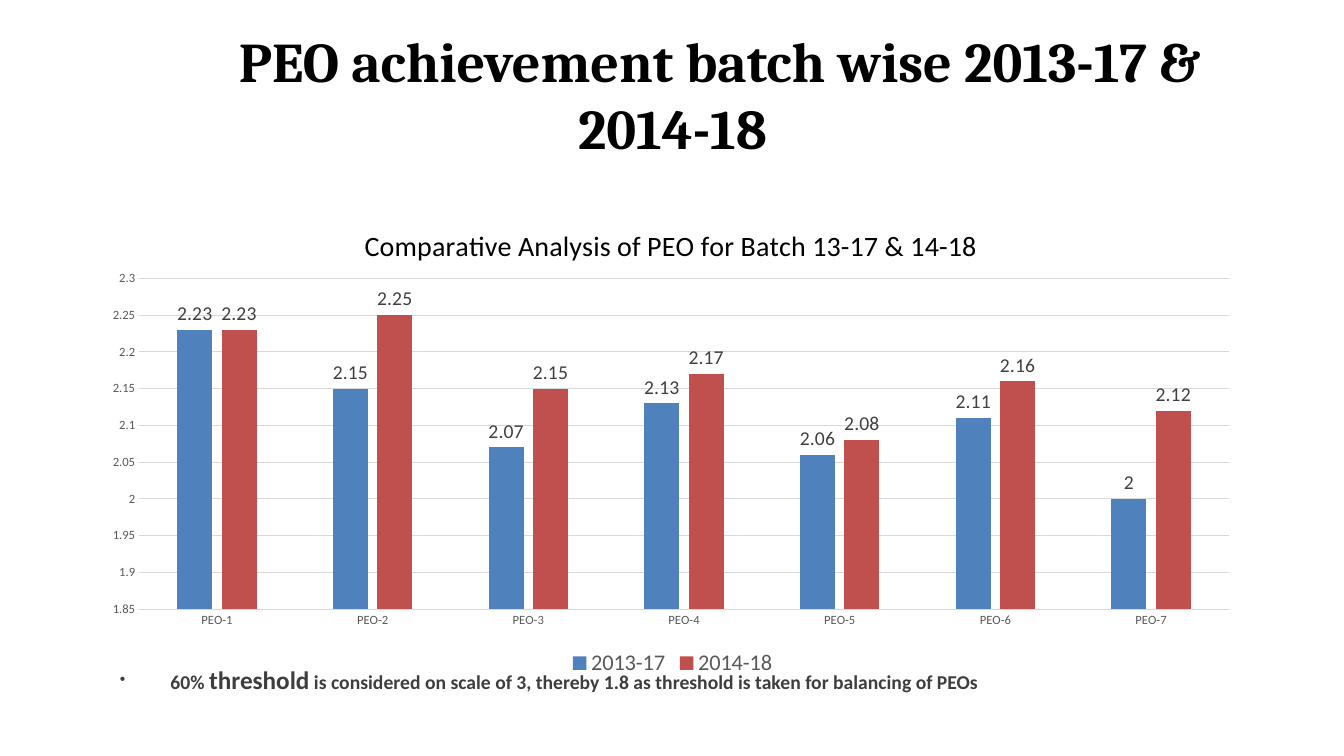
from lxml import etree
from pptx import Presentation
from pptx import util as u
from pptx.chart.data import CategoryChartData
from pptx.dml.color import RGBColor
from pptx.enum import chart as ch, text as tx
from pptx.oxml import ns

HUES = {"ink": "000000", "note": "3E3E3E", "label": "404040", "axis": "595959",
        "grid": "D9D9D9", "first": "4F81BD", "second": "C0504D"}
CATS = [f"PEO-{i}" for i in range(1, 8)]
BATCHES = {
    "2013-17": ("first", (2.23, 2.15, 2.07, 2.13, 2.06, 2.11, 2)),
    "2014-18": ("second", (2.23, 2.25, 2.15, 2.17, 2.08, 2.16, 2.12)),
}
NOTE = (("60% ", 14), ("threshold", 18),
        (" is considered on scale of 3, thereby 1.8 as threshold"
         " is taken for balancing of PEOs", 14))


def apply(item, **vals):
    for key, val in vals.items():
        setattr(item, key, val)


def style(font, size, hue, bold=False, name="Calibri"):
    apply(font, size=u.Pt(size), bold=bold, name=name)
    font.color.rgb = RGBColor.from_string(HUES[hue])


def rule(line, hue):
    line.width = u.Pt(0.75)
    line.color.rgb = RGBColor.from_string(HUES[hue])


def place(shape, box):
    names = ("left", "top", "width", "height")
    apply(shape, **dict(zip(names, map(u.Inches, box))))


def add(parent, tag, **attrs):
    return etree.SubElement(parent, ns.qn(tag), attrs)


def pin(node, after, **spots):
    for old in node.findall(ns.qn("c:layout")):
        node.remove(old)
    lay = etree.Element(ns.qn("c:layout"))
    man = add(lay, "c:manualLayout")
    if "w" in spots:
        add(man, "c:layoutTarget", val="inner")
    for key in ("xMode", "yMode"):
        add(man, f"c:{key}", val="edge")
    for key, val in spots.items():
        add(man, f"c:{key}", val=str(val))
    if after is None:
        node.insert(0, lay)
    else:
        after.addnext(lay)


def head(slide, box):
    title = slide.shapes.title
    place(title, box)
    frame = title.text_frame
    apply(frame, word_wrap=True, vertical_anchor=tx.MSO_ANCHOR.MIDDLE,
          auto_size=tx.MSO_AUTO_SIZE.NONE)
    para = frame.paragraphs[0]
    para.alignment = tx.PP_ALIGN.CENTER
    para._p.get_or_add_pPr().set("indent", str(u.Inches(0.94)))
    run = para.add_run()
    run.text = "PEO achievement batch wise 2013-17 & 2014-18"
    style(run.font, 40, "ink", True, "Cambria")


def bars(slide, box):
    data = CategoryChartData()
    data.categories = CATS
    for name, (hue, vals) in BATCHES.items():
        data.add_series(name, vals)
    chart = slide.shapes.add_chart(
        ch.XL_CHART_TYPE.COLUMN_CLUSTERED, *map(u.Inches, box), data).chart
    style(chart.font, 10, "ink")

    chart.has_title = True
    title = chart.chart_title
    title.include_in_layout = False
    run = title.text_frame.paragraphs[0].add_run()
    run.text = "Comparative Analysis of PEO for Batch 13-17 & 14-18"
    style(run.font, 20, "ink")
    node = title._element
    pin(node, node.find(ns.qn("c:tx")), x=0.23, y=0.04)
    pin(chart._chartSpace.chart.plotArea, None, x=0.04, y=0.16, w=0.94, h=0.69)

    chart.has_legend = True
    apply(chart.legend, position=ch.XL_LEGEND_POSITION.BOTTOM,
          include_in_layout=False)
    style(chart.legend.font, 16, "axis")

    for axis in (chart.category_axis, chart.value_axis):
        apply(axis, major_tick_mark=ch.XL_TICK_MARK.NONE,
              minor_tick_mark=ch.XL_TICK_MARK.NONE)
        style(axis.tick_labels.font, 9, "axis")
    rule(chart.category_axis.format.line, "grid")
    scale = chart.value_axis
    apply(scale, minimum_scale=1.85, maximum_scale=2.3, major_unit=0.05,
          has_major_gridlines=True)
    scale.format.line.fill.background()
    rule(scale.major_gridlines.format.line, "grid")

    plot = chart.plots[0]
    apply(plot, gap_width=219, overlap=-27, vary_by_categories=False)
    for series, (hue, vals) in zip(plot.series, BATCHES.values()):
        series.format.fill.solid()
        series.format.fill.fore_color.rgb = RGBColor.from_string(HUES[hue])
        apply(series.data_labels, show_value=True,
              position=ch.XL_LABEL_POSITION.OUTSIDE_END)
        style(series.data_labels.font, 14, "label")


def note(slide, box):
    frame = slide.shapes.add_textbox(*map(u.Inches, box)).text_frame
    apply(frame, word_wrap=True, margin_left=0, margin_right=0,
          margin_top=0, margin_bottom=0,
          auto_size=tx.MSO_AUTO_SIZE.SHAPE_TO_FIT_TEXT)
    para = frame.paragraphs[0]
    apply(para, line_spacing=0.9, space_before=u.Pt(3))
    props = para._p.get_or_add_pPr()
    props.set("marL", str(u.Inches(0.5)))
    props.set("indent", str(u.Inches(-0.5)))
    add(props, "a:buSzPct", val="80000")
    add(props, "a:buFont", typeface="Arial")
    add(props, "a:buChar", char="•")
    for words, size in NOTE:
        run = para.add_run()
        run.text = words
        style(run.font, size, "note", True)


def main():
    deck = Presentation()
    apply(deck, slide_width=u.Inches(13.33), slide_height=u.Inches(7.5))
    slide = deck.slides.add_slide(deck.slide_layouts[5])
    head(slide, (0.67, 0.3, 12, 1.25))
    bars(slide, (0.92, 2, 11.5, 4.76))
    note(slide, (1.19, 6.62, 10.61, 0.27))
    deck.save("out.pptx")


if __name__ == "__main__":
    main()
